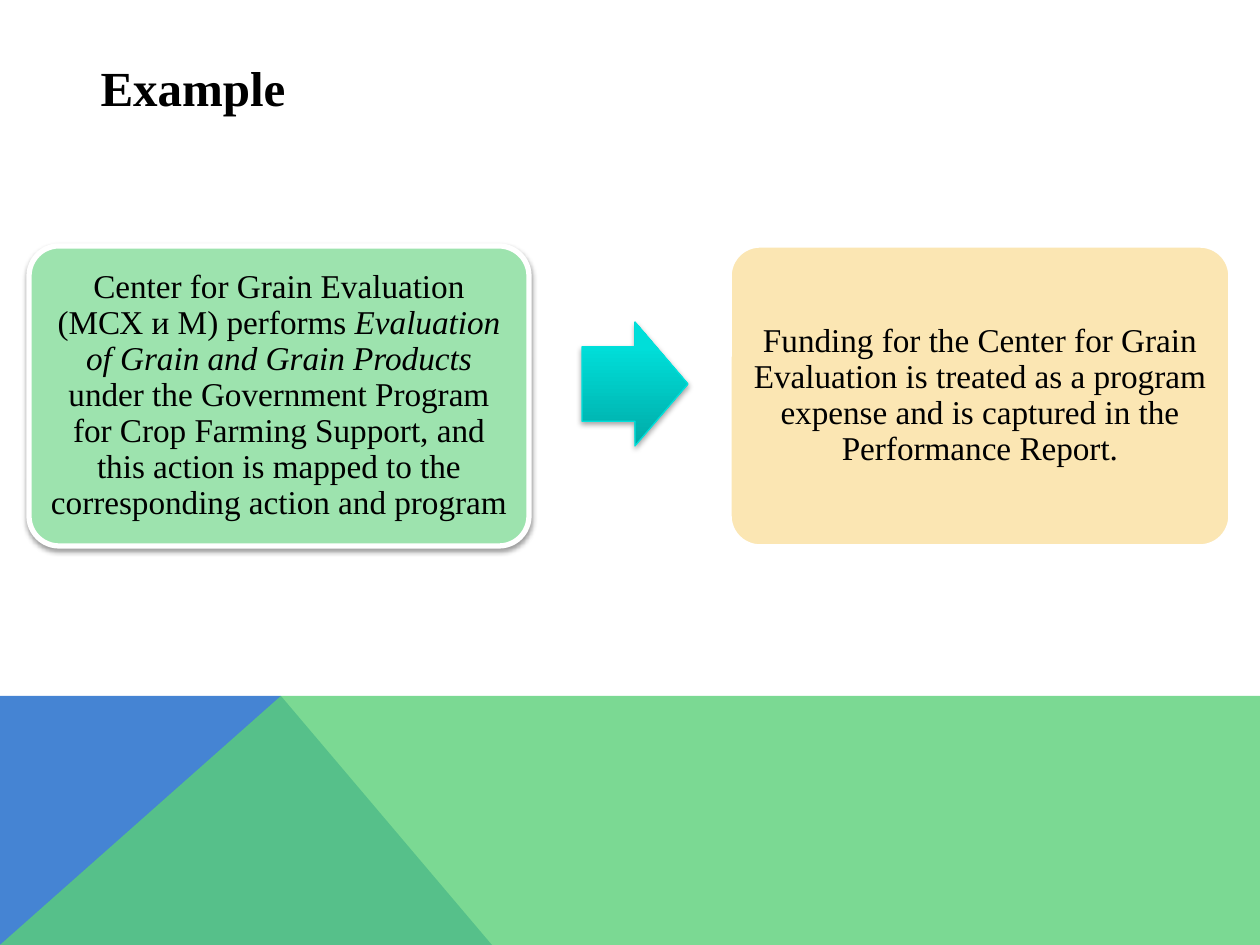
import pptx
import pptx.dml.color
import pptx.enum.shapes
import pptx.enum.text
import pptx.oxml
import pptx.oxml.ns
import pptx.util
from lxml import etree

PX = 914400 / 126
FONT = "Times New Roman"
SHAPES = pptx.enum.shapes.MSO_SHAPE
ALIGN = pptx.enum.text.PP_ALIGN


def rgb(color):
    return pptx.dml.color.RGBColor.from_string(color)


def write(frame, runs, size, align, bold=False, spacing=1.0, inset=None):
    """Fill one centred-anchor paragraph with (text, italic) runs."""
    frame.word_wrap = True
    frame.vertical_anchor = pptx.enum.text.MSO_ANCHOR.MIDDLE
    if inset is not None:
        frame.margin_left = frame.margin_right = round(inset * PX)
        frame.margin_top = frame.margin_bottom = round(inset * PX)
    paragraph = frame.paragraphs[0]
    paragraph.alignment = align
    paragraph.line_spacing = spacing
    for text, italic in runs:
        run = paragraph.add_run()
        run.text = text
        run.font.name = FONT
        run.font.size = pptx.util.Pt(size)
        run.font.bold = bold
        run.font.italic = italic
        run.font.color.rgb = rgb("000000")


prs = pptx.Presentation()
prs.slide_width = round(1260 * PX)
prs.slide_height = round(945 * PX)
slide = prs.slides.add_slide(prs.slide_layouts[5])

# Footer: a blue wedge under a translucent green band
bands = [
    ("4584D3", 100, [(0, 945), (0, 696), (281, 696), (492, 945)]),
    ("5BD078", 80, [(0, 945), (281, 696), (1260, 696), (1260, 945)]),
]
for color, opacity, points in bands:
    outline = slide.shapes.build_freeform(*points[0], scale=PX)
    outline.add_line_segments(points[1:], close=True)
    band = outline.convert_to_shape()
    band.shadow.inherit = False
    band.line.fill.background()
    band.fill.solid()
    band.fill.fore_color.rgb = rgb(color)
    if opacity < 100:
        solid = band.fill._xPr.find(pptx.oxml.ns.qn("a:solidFill"))
        etree.SubElement(solid[0], pptx.oxml.ns.qn("a:alpha"), val=str(opacity * 1000))

title = slide.shapes.title
title.left, title.top, title.width, title.height = (
    round(n * PX) for n in (88, 49, 1036, 76))
write(title.text_frame, [("Example", False)], 28, ALIGN.LEFT, bold=True)

# Two cards joined by an arrow
action = [
    ("Center for Grain Evaluation (МСХ и М) performs ", False),
    ("Evaluation of Grain and Grain Products", True),
    (" under the Government Program for Crop Farming Support, and this action "
     "is mapped to the corresponding action and program", False),
]
funding = [
    ("Funding for the Center for Grain Evaluation is treated as a program expense "
     "and is captured in the Performance Report.", False),
]
flow = [
    # preset, box, adjustments, fill, line, line width, shadow opacity, text
    (SHAPES.ROUNDED_RECTANGLE, (29, 246, 500, 300), [0.1], "9DE3AE", "FFFFFF", 3, 38, action),
    (SHAPES.RIGHT_ARROW, (582, 322, 106, 124), [0.6, 0.5], None, "00E0DB", 0.75, 35, []),
    (SHAPES.ROUNDED_RECTANGLE, (730, 246, 500, 300), [0.1], "FBE6B3", "FFFFFF", 2, 0, funding),
]
for preset, box, adjustments, fill, line, width, shade, runs in flow:
    step = slide.shapes.add_shape(preset, *(round(n * PX) for n in box))
    for i, value in enumerate(adjustments):
        step.adjustments[i] = value
    if fill:
        step.fill.solid()
        step.fill.fore_color.rgb = rgb(fill)
    else:
        step.fill.gradient()
        step.fill.gradient_angle = 90
        for stop, position, color in zip(
                step.fill.gradient_stops, (0, 0.8), ("00ABA7", "00DED9")):
            stop.position = position
            stop.color.rgb = rgb(color)
    step.line.color.rgb = rgb(line)
    step.line.width = pptx.util.Pt(width)
    step.shadow.inherit = False
    if shade:
        effects = step._element.spPr.find(pptx.oxml.ns.qn("a:effectLst"))
        effects.append(pptx.oxml.parse_xml(
            f'<a:outerShdw {pptx.oxml.ns.nsdecls("a")} blurRad="40000" dist="20000" '
            f'dir="5400000" rotWithShape="0"><a:srgbClr val="000000">'
            f'<a:alpha val="{shade * 1000}"/></a:srgbClr></a:outerShdw>'))
    if runs:
        write(step.text_frame, runs, 19, ALIGN.CENTER, spacing=0.9, inset=10)

prs.save("out.pptx")
